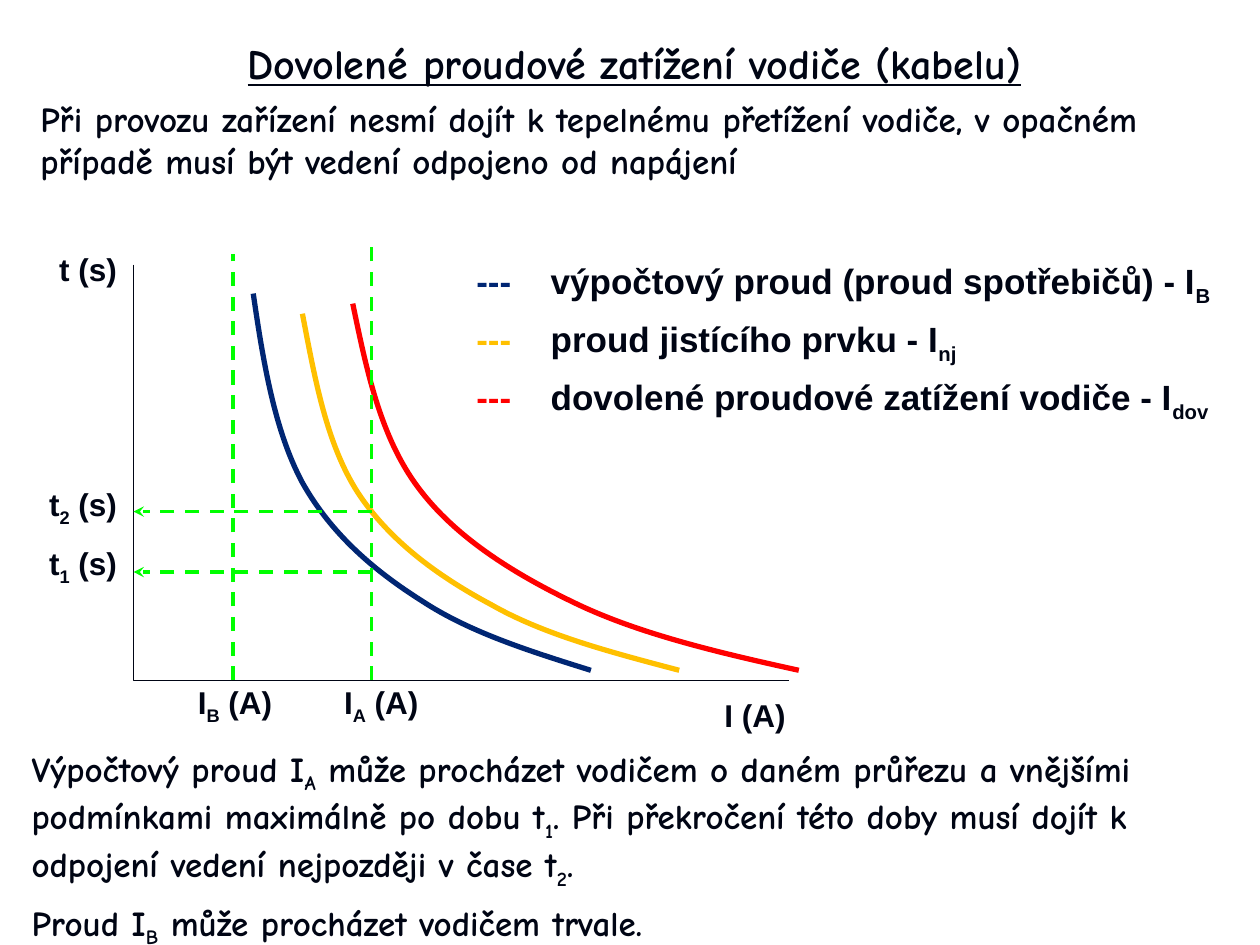
from dataclasses import dataclass
from typing import NamedTuple

import pptx
import pptx.dml.color
import pptx.enum.dml
import pptx.enum.shapes
import pptx.enum.text
import pptx.oxml.ns
import pptx.oxml.xmlchemy
import pptx.util

COLUMNS, ROWS = 100, 75
WIDTH, HEIGHT = pptx.util.Inches(10), pptx.util.Inches(7.5)
ANCHOR = pptx.enum.text.MSO_ANCHOR
ALIGN = pptx.enum.text.PP_ALIGN


@dataclass(frozen=True)
class Theme:
    ink: str = "000514"
    load: str = "002673"
    breaker: str = "FFC000"
    cable: str = "FF0000"
    guide: str = "00FF00"
    prose_font: str = "Comic Neue"
    chart_font: str = "Arial"
    title_size: int = 24
    text_size: int = 20
    label_size: int = 18
    axis_width: float = 0.75
    guide_width: float = 2
    curve_width: float = 3
    paragraph_gap: int = 6


class Point(NamedTuple):
    col: float
    row: float


class Box(NamedTuple):
    col: float
    row: float
    cols: float
    rows: float


class Label(NamedTuple):
    text: str
    box: Box


class Entry(NamedTuple):
    text: str
    color: str
    curve: list[Point]


class Guide(NamedTuple):
    start: Point
    end: Point
    arrow: bool


THEME = Theme()
ORIGIN = Point(10.6, 54)
I_B, I_A = 18.5, 29.5
T_1, T_2 = 45.4, 40.6
LABEL_ROWS = 3.8
FRAME_INSET, LABEL_INSET = 0.05, 0.04
LEGEND_INDENT = pptx.util.Inches(0.59)

TITLE = "Dovolené proudové zatížení vodiče (kabelu)"
INTRO = ["Při provozu zařízení nesmí dojít k tepelnému přetížení vodiče, "
         "v opačném případě musí být vedení odpojeno od napájení"]
CONCLUSION = [
    "Výpočtový proud I~A~ může procházet vodičem o daném průřezu a vnějšími "
    "podmínkami maximálně po dobu t~1~. Při překročení této doby musí dojít k "
    "odpojení vedení nejpozději v čase t~2~.",
    "Proud I~B~ může procházet vodičem trvale.",
]
LABELS = [
    Label("t (s)", Box(4.3, 19.4, 5.4, LABEL_ROWS)),
    Label("t~2~ (s)", Box(3.5, 38.3, 6.3, LABEL_ROWS)),
    Label("t~1~ (s)", Box(3.5, 43, 6.3, LABEL_ROWS)),
    Label("I~B~ (A)", Box(15.3, ORIGIN.row, 6.9, LABEL_ROWS)),
    Label("I~A~ (A)", Box(26.9, ORIGIN.row, 6.9, LABEL_ROWS)),
    Label("I (A)", Box(57.1, 54.8, 5.7, LABEL_ROWS)),
]
ENTRIES = [
    Entry("výpočtový proud (proud spotřebičů) - I~B~", THEME.load, [
        Point(20.1, 23.3), Point(20.9, 28.8), Point(21.8, 34.2), Point(24, 38.3),
        Point(26.3, 42.4), Point(29.7, 45.3), Point(33.5, 47.7),
        Point(37.3, 50.2), Point(42.1, 51.7), Point(46.9, 53.2)]),
    Entry("proud jistícího prvku - I~nj~", THEME.breaker, [
        Point(24, 24.9), Point(25, 30.1), Point(25.9, 35.2), Point(28.4, 39.1),
        Point(30.9, 42.9), Point(34.7, 45.7), Point(39, 48),
        Point(43.2, 50.4), Point(48.6, 51.8), Point(53.9, 53.2)]),
    Entry("dovolené proudové zatížení vodiče - I~dov~", THEME.cable, [
        Point(28, 24.1), Point(29.1, 29.4), Point(30.2, 34.7), Point(33.2, 38.7),
        Point(36.1, 42.6), Point(40.7, 45.5), Point(45.7, 47.9),
        Point(50.7, 50.3), Point(57, 51.8), Point(63.4, 53.2)]),
]
GUIDES = [
    Guide(Point(I_A, ORIGIN.row), Point(I_A, 19.4), False),
    Guide(Point(I_A, T_1), Point(ORIGIN.col, T_1), True),
    Guide(Point(I_A, T_2), Point(ORIGIN.col, T_2), True),
    Guide(Point(I_B, ORIGIN.row), Point(I_B, 20.2), False),
]


def place(col: float, row: float) -> tuple[int, int]:
    return round(WIDTH * col / COLUMNS), round(HEIGHT * row / ROWS)


def apply(target, values: dict) -> None:
    for name, value in values.items():
        setattr(target, name, value)


def add_run(paragraph, text: str, color: str, **font):
    run = paragraph.add_run()
    run.text = text
    apply(run.font, {"bold": True, **font})
    run.font.color.rgb = pptx.dml.color.RGBColor.from_string(color)
    return run


def add_marked(paragraph, text: str, **font) -> None:
    for index, piece in enumerate(text.split("~")):
        if piece:
            run = add_run(paragraph, piece, THEME.ink, **font)
            if index % 2:
                run._r.get_or_add_rPr().set("baseline", "-25000")


def set_frame(shape, box: Box, inset: float, anchor, wrap: bool = True) -> None:
    left, top = place(box.col, box.row)
    width, height = place(box.cols, box.rows)
    apply(shape, {"left": left, "top": top, "width": width, "height": height})
    margin = pptx.util.Inches(inset)
    apply(shape.text_frame, {
        "word_wrap": wrap, "vertical_anchor": anchor,
        "auto_size": pptx.enum.text.MSO_AUTO_SIZE.NONE,
        "margin_left": margin, "margin_right": margin,
        "margin_top": margin, "margin_bottom": margin})


def fill_placeholder(shape, box: Box, texts: list[str], align, **font) -> None:
    set_frame(shape, box, FRAME_INSET, ANCHOR.TOP)
    frame = shape.text_frame
    for index, text in enumerate(texts):
        paragraph = frame.add_paragraph() if index else frame.paragraphs[0]
        gap = pptx.util.Pt(THEME.paragraph_gap if index else 0)
        apply(paragraph, {"alignment": align, "space_before": gap})
        properties = paragraph._p.get_or_add_pPr()
        properties.set("marL", "0")
        properties.set("indent", "0")
        properties.append(pptx.oxml.xmlchemy.OxmlElement("a:buNone"))
        add_marked(paragraph, text, name=THEME.prose_font, **font)


def add_label(shapes, label: Label) -> None:
    shape = shapes.add_textbox(0, 0, 0, 0)
    set_frame(shape, label.box, LABEL_INSET, ANCHOR.MIDDLE, wrap=False)
    add_marked(shape.text_frame.paragraphs[0], label.text,
               name=THEME.chart_font, size=pptx.util.Pt(THEME.label_size))


def add_legend(shapes, box: Box, entries: list[Entry]) -> None:
    shape = shapes.add_textbox(0, 0, 0, 0)
    set_frame(shape, box, LABEL_INSET, ANCHOR.MIDDLE)
    frame = shape.text_frame
    font = {"name": THEME.chart_font, "size": pptx.util.Pt(THEME.text_size)}
    for index, entry in enumerate(entries):
        paragraph = frame.add_paragraph() if index else frame.paragraphs[0]
        paragraph.space_before = pptx.util.Pt(THEME.paragraph_gap)
        properties = paragraph._p.get_or_add_pPr()
        properties.set("marL", str(LEGEND_INDENT))
        properties.set("indent", str(-LEGEND_INDENT))
        add_run(paragraph, "---\t", entry.color, **font)
        add_marked(paragraph, entry.text, **font)


def set_line(line, color: str, width: float) -> None:
    line.color.rgb = pptx.dml.color.RGBColor.from_string(color)
    line.width = pptx.util.Pt(width)


def add_outline(shapes, points: list[Point], color: str, width: float):
    start, *rest = [place(*point) for point in points]
    builder = shapes.build_freeform(*start)
    builder.add_line_segments(rest, close=False)
    shape = builder.convert_to_shape()
    shape.shadow.inherit = False
    shape.fill.background()
    set_line(shape.line, color, width)
    return shape


def add_curve(shapes, entry: Entry) -> None:
    shape = add_outline(shapes, entry.curve, entry.color, THEME.curve_width)
    steps = list(shape._element.iter(pptx.oxml.ns.qn("a:lnTo")))
    for first in range(0, len(steps), 3):
        bezier = pptx.oxml.xmlchemy.OxmlElement("a:cubicBezTo")
        steps[first].addprevious(bezier)
        for step in steps[first:first + 3]:
            bezier.append(step[0])
            step.getparent().remove(step)


def add_guide(shapes, guide: Guide) -> None:
    connector = shapes.add_connector(pptx.enum.shapes.MSO_CONNECTOR.STRAIGHT,
                                     *place(*guide.start), *place(*guide.end))
    set_line(connector.line, THEME.guide, THEME.guide_width)
    connector.line.dash_style = pptx.enum.dml.MSO_LINE.DASH
    if guide.arrow:
        head = pptx.oxml.xmlchemy.OxmlElement("a:tailEnd")
        head.set("type", "stealth")
        connector.line._get_or_add_ln().append(head)
    connector._element.spPr.append(pptx.oxml.xmlchemy.OxmlElement("a:effectLst"))


def main() -> None:
    deck = pptx.Presentation()
    apply(deck, {"slide_width": WIDTH, "slide_height": HEIGHT})
    slide = deck.slides.add_slide(deck.slide_layouts.get_by_name("Two Content"))
    shapes = slide.shapes
    title, intro, conclusion = slide.placeholders
    text_size = pptx.util.Pt(THEME.text_size)
    fill_placeholder(title, Box(2.7, 2.5, 95.3, 4.8), [TITLE], ALIGN.CENTER,
                     size=pptx.util.Pt(THEME.title_size), underline=True)
    fill_placeholder(intro, Box(2.7, 7.2, 95.3, 8), INTRO, ALIGN.LEFT, size=text_size)
    fill_placeholder(conclusion, Box(2, 58.8, 96.1, 15.3), CONCLUSION, ALIGN.LEFT,
                     size=text_size)
    add_outline(shapes, [Point(ORIGIN.col, 21), ORIGIN, Point(62.6, ORIGIN.row)],
                THEME.ink, THEME.axis_width)
    add_legend(shapes, Box(37.4, 20.7, 59.9, 12.8), ENTRIES)
    for entry in ENTRIES:
        add_curve(shapes, entry)
    for guide in GUIDES:
        add_guide(shapes, guide)
    for label in LABELS:
        add_label(shapes, label)
    deck.save("out.pptx")


if __name__ == "__main__":
    main()
